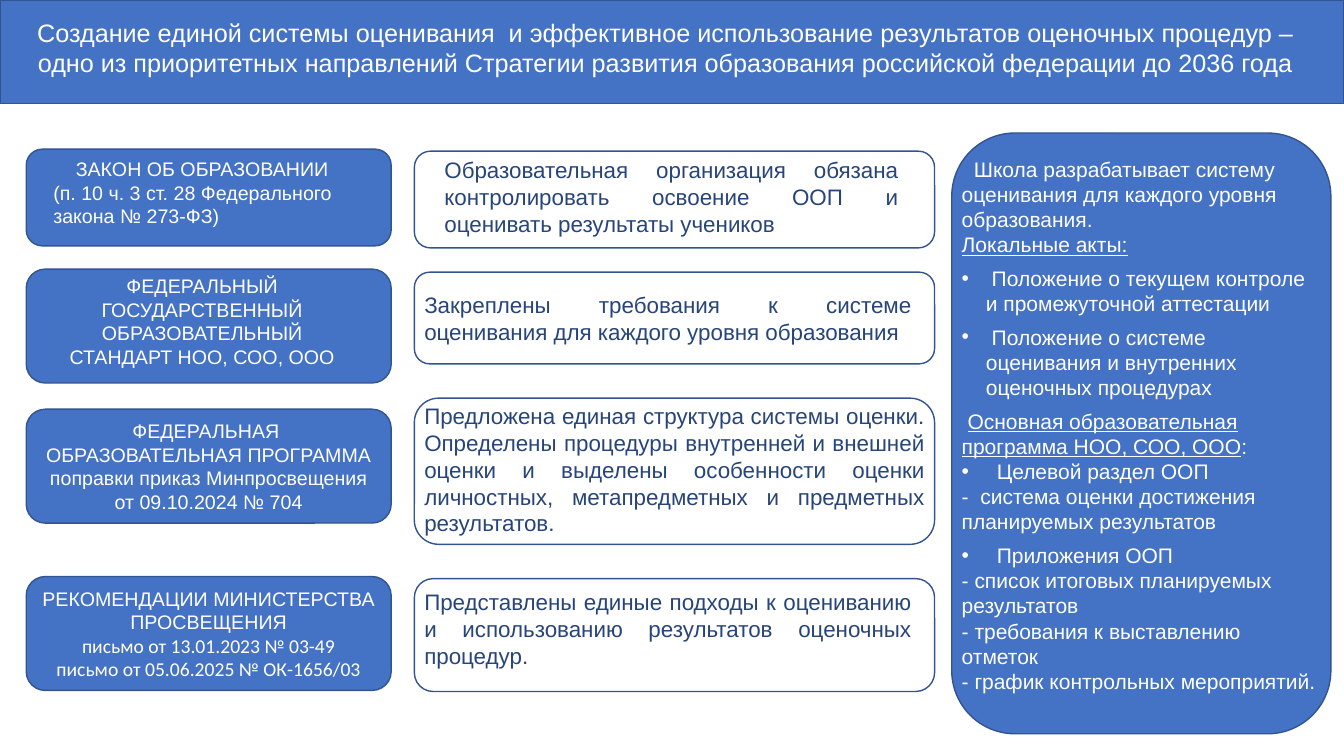
"""Build the slide on the unified assessment system and its legal basis."""
import dataclasses

import lxml.etree
import pptx
import pptx.dml.color
import pptx.enum.shapes
import pptx.enum.text
import pptx.oxml.ns
import pptx.util

Inches = pptx.util.Inches
Align = pptx.enum.text.PP_ALIGN
Anchor = pptx.enum.text.MSO_ANCHOR


@dataclasses.dataclass(frozen=True)
class Theme:
    blue: str = "4472C4"
    outline: str = "325491"
    white: str = "FFFFFF"
    navy: str = "27457B"
    title_size: int = 18
    source_size: int = 14
    duty_size: int = 16
    school_size: int = 15
    font: str = "Arial"
    letter_font: str = "Calibri"


@dataclasses.dataclass
class Line:
    runs: list
    align: Align = Align.LEFT
    before: int = 0
    margin: float = 0
    indent: float = 0
    bullet: bool = False
    font: str = ""


class SlideBuilder:
    def __init__(self, presentation, theme):
        self.theme = theme
        self.slide = presentation.slides.add_slide(presentation.slide_layouts[5])

    def assign(self, target, values):
        for name, value in values.items():
            setattr(target, name, value)

    def place(self, shape, box):
        names = ("left", "top", "width", "height")
        self.assign(shape, {name: Inches(value) for name, value in zip(names, box)})

    def color(self, value):
        return pptx.dml.color.RGBColor.from_string(value)

    def paint(self, shape, fill):
        if fill:
            shape.fill.solid()
            shape.fill.fore_color.rgb = self.color(fill)
        else:
            shape.fill.background()
        shape.line.color.rgb = self.color(self.theme.outline)
        shape.line.width = pptx.util.Pt(1)

    def fill_text(self, shape, lines, size, color, anchor=Anchor.TOP):
        frame = shape.text_frame
        self.assign(frame, {
            "word_wrap": True,
            "auto_size": pptx.enum.text.MSO_AUTO_SIZE.NONE,
            "vertical_anchor": anchor,
        })
        for number, line in enumerate(lines):
            paragraph = frame.add_paragraph() if number else frame.paragraphs[0]
            self.set_indent(paragraph, line)
            self.assign(paragraph, {
                "alignment": line.align,
                "space_before": pptx.util.Pt(line.before),
            })
            for text, underlined in line.runs:
                run = paragraph.add_run()
                run.text = text
                self.assign(run.font, {
                    "name": line.font or self.theme.font,
                    "size": pptx.util.Pt(size),
                    "underline": underlined,
                })
                run.font.color.rgb = self.color(color)

    def set_indent(self, paragraph, line):
        properties = paragraph._p.get_or_add_pPr()
        properties.set("marL", str(Inches(line.margin)))
        properties.set("indent", str(Inches(line.indent)))
        if line.bullet:
            for tag, name, value in (("a:buFont", "typeface", self.theme.font),
                                     ("a:buChar", "char", "•")):
                element = lxml.etree.SubElement(properties, pptx.oxml.ns.qn(tag))
                element.set(name, value)

    def title(self, box, text):
        shape = self.slide.shapes.title
        self.place(shape, box)
        self.paint(shape, self.theme.blue)
        self.assign(shape.text_frame, {
            "margin_left": Inches(0.1),
            "margin_right": Inches(0.23),
            "margin_top": Inches(0.17),
        })
        self.fill_text(shape, [plain(text, Align.CENTER)],
                       self.theme.title_size, self.theme.white)

    def card(self, box, fill=None):
        shape = self.slide.shapes.add_shape(
            pptx.enum.shapes.MSO_SHAPE.ROUNDED_RECTANGLE, *map(Inches, box))
        shape.shadow.inherit = False
        self.paint(shape, fill)
        return shape

    def text(self, box, lines, size, color):
        shape = self.slide.shapes.add_textbox(*map(Inches, box))
        self.fill_text(shape, lines, size, color)

    def source(self, top, height, lines, text_top=None):
        shape = self.card((0.26, top, 3.62, height), self.theme.blue)
        style = (lines, self.theme.source_size, self.theme.white)
        if text_top is None:
            self.fill_text(shape, *style, anchor=Anchor.MIDDLE)
        else:
            self.text((0.43, text_top, 3.15, height - 0.1), *style)

    def duty(self, top, height, text_box, text):
        self.card((4.11, top, 5.16, height))
        self.text(text_box, [plain(text, Align.JUSTIFY)],
                  self.theme.duty_size, self.theme.navy)

    def school(self, box, text_box, lines):
        self.card(box, self.theme.blue)
        self.text(text_box, lines, self.theme.school_size, self.theme.white)


def plain(text, align=Align.LEFT, **options):
    return Line([(text, False)], align, **options)


def bullet(text, margin, before=0):
    return plain(text, margin=margin, indent=-margin, before=before, bullet=True)


def main():
    theme = Theme()
    presentation = pptx.Presentation()
    presentation.slide_width = Inches(13.33)
    presentation.slide_height = Inches(7.5)
    builder = SlideBuilder(presentation, theme)

    builder.title((0, 0, 13.33, 1.03),
                  "Создание единой системы оценивания  и эффективное использование "
                  "результатов оценочных процедур – одно из приоритетных направлений "
                  "Стратегии развития образования российской федерации до 2036 года")

    sources = [
        (1.48, 0.96, [
            plain("ЗАКОН ОБ ОБРАЗОВАНИИ", Align.CENTER),
            plain("(п. 10 ч. 3 ст. 28 Федерального закона № 273-ФЗ)")], 1.51),
        (2.67, 1.13, [
            plain("ФЕДЕРАЛЬНЫЙ ГОСУДАРСТВЕННЫЙ ОБРАЗОВАТЕЛЬНЫЙ "
                  "СТАНДАРТ НОО, СОО, ООО", Align.CENTER)], 2.67),
        (4.06, 1.13, [
            plain("ФЕДЕРАЛЬНАЯ  ОБРАЗОВАТЕЛЬНАЯ ПРОГРАММА поправки приказ "
                  "Минпросвещения от 09.10.2024 № 704", Align.CENTER)]),
        (5.72, 1.13, [
            plain("РЕКОМЕНДАЦИИ МИНИСТЕРСТВА ПРОСВЕЩЕНИЯ", Align.CENTER),
            plain("письмо от 13.01.2023 № 03-49", Align.CENTER, font=theme.letter_font),
            plain("письмо от 05.06.2025 № ОК-1656/03", Align.CENTER,
                  font=theme.letter_font)]),
    ]
    for source in sources:
        builder.source(*source)

    duties = [
        (1.5, 0.96, (4.31, 1.5, 4.7, 0.91),
         "Образовательная организация обязана контролировать освоение ООП "
         "и оценивать результаты учеников"),
        (2.7, 0.91, (4.11, 2.84, 5.03, 0.64),
         "Закреплены требования к системе оценивания для каждого уровня образования"),
        (3.95, 1.45, (4.11, 3.94, 5.16, 1.45),
         "Предложена единая структура системы оценки. Определены процедуры "
         "внутренней и внешней оценки и выделены особенности оценки личностных, "
         "метапредметных и предметных результатов."),
        (5.74, 1.12, (4.11, 5.79, 5.03, 0.91),
         "Представлены единые подходы к оцениванию и использованию результатов "
         "оценочных процедур."),
    ]
    for duty in duties:
        builder.duty(*duty)

    builder.school((9.44, 1.32, 3.76, 5.96), (9.44, 1.5, 3.76, 5.6), [
        plain("Школа разрабатывает систему оценивания для каждого уровня образования.",
              indent=0.12),
        Line([("Локальные акты:", True)]),
        bullet(" Положение о текущем контроле и промежуточной аттестации", 0.24, 6),
        bullet(" Положение о системе оценивания и внутренних оценочных процедурах", 0.24, 6),
        Line([(" ", False), ("Основная образовательная программа НОО, СОО, ООО", True),
              (":", False)], before=6),
        bullet(" Целевой раздел ООП", 0.29),
        plain("-  система оценки достижения планируемых результатов"),
        bullet(" Приложения ООП", 0.29, 6),
        plain("- список итоговых планируемых результатов"),
        plain("- требования к выставлению отметок"),
        plain("- график контрольных мероприятий."),
    ])
    presentation.save("out.pptx")


if __name__ == "__main__":
    main()
